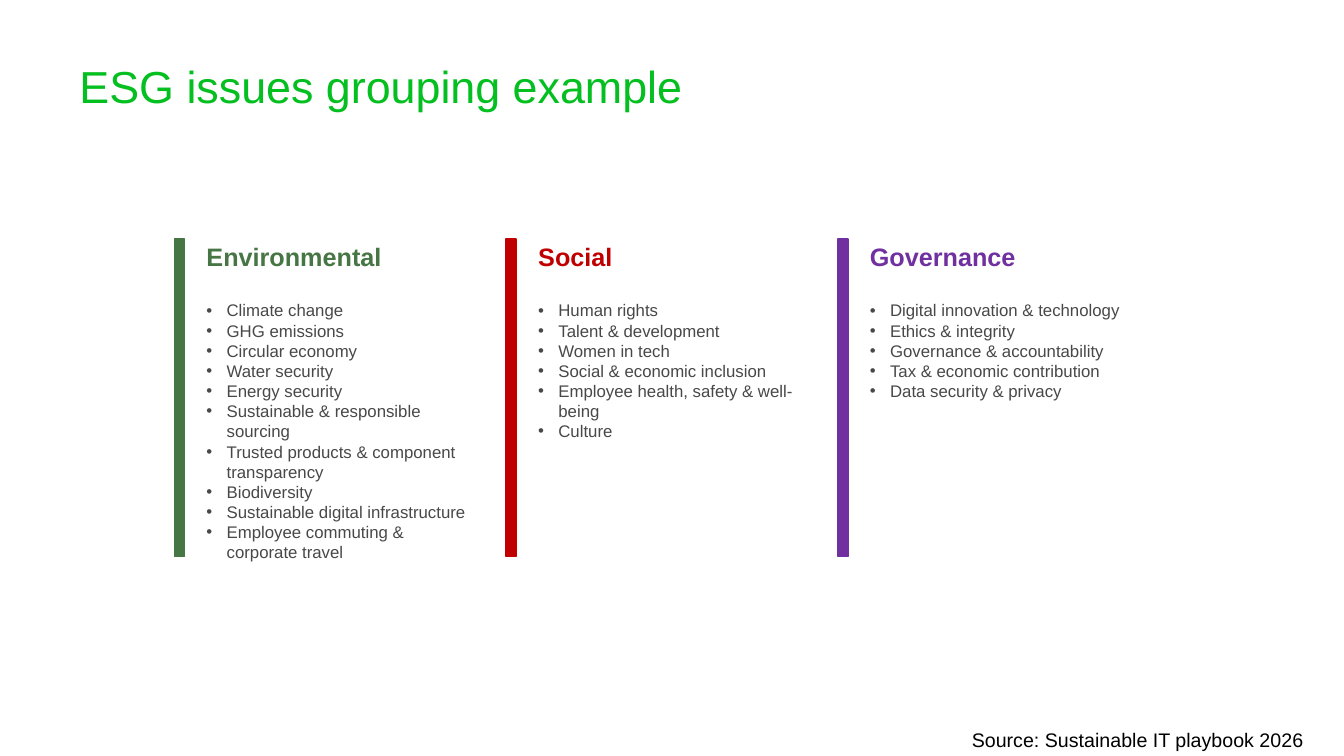
import pptx
import pptx.dml.color
import pptx.enum.shapes
import pptx.enum.text
import pptx.util
from lxml import etree

TITLE = "ESG issues grouping example"
SOURCE = "Source: Sustainable IT playbook 2026"
GROUPS = [
    ("Environmental", "467643", [
        "Climate change",
        "GHG emissions",
        "Circular economy",
        "Water security",
        "Energy security",
        "Sustainable & responsible sourcing",
        "Trusted products & component transparency",
        "Biodiversity",
        "Sustainable digital infrastructure",
        "Employee commuting & corporate travel",
    ]),
    ("Social", "C00000", [
        "Human rights",
        "Talent & development",
        "Women in tech",
        "Social & economic inclusion",
        "Employee health, safety & well-being",
        "Culture",
    ]),
    ("Governance", "7030A0", [
        "Digital innovation & technology",
        "Ethics & integrity",
        "Governance & accountability",
        "Tax & economic contribution",
        "Data security & privacy",
    ]),
]
FONT = "Arial"
TITLE_COLOR, ISSUE_COLOR, SOURCE_COLOR = "04BF20", "484848", "000000"
GRID_LEFT, GRID_TOP, COLUMN_PITCH = 1.73, 2.37, 3.29
BAR_WIDTH, ROW_HEIGHT = 0.1, 3.15
TEXT_OFFSET, TEXT_WIDTH = 0.22, 2.83
INDENT = 0.2

inches = pptx.util.Inches


def color(value):
    return pptx.dml.color.RGBColor.from_string(value)


def format_runs(paragraph, size, value, bold=False):
    for run in paragraph.runs:
        run.font.name = FONT
        run.font.size = pptx.util.Pt(size)
        run.font.bold = bold
        run.font.color.rgb = color(value)


def add_text(slide, left, top, width, height, text, size, value, bold=False):
    shape = slide.shapes.add_textbox(*map(inches, (left, top, width, height)))
    shape.text_frame.word_wrap = True
    shape.text_frame.text = text
    format_runs(shape.text_frame.paragraphs[0], size, value, bold)
    return shape.text_frame


def add_bullet(paragraph, value):
    properties = paragraph._p.get_or_add_pPr()
    properties.set("marL", str(inches(INDENT)))
    properties.set("indent", str(-inches(INDENT)))
    namespace = pptx.oxml.ns.qn
    bullet_color = etree.SubElement(properties, namespace("a:buClr"))
    etree.SubElement(bullet_color, namespace("a:srgbClr"), val=value)
    etree.SubElement(properties, namespace("a:buFont"), typeface=FONT)
    etree.SubElement(properties, namespace("a:buChar"), char="•")


def add_group(slide, column, heading, value, issues):
    left = GRID_LEFT + column * COLUMN_PITCH
    bar = slide.shapes.add_shape(
        pptx.enum.shapes.MSO_SHAPE.RECTANGLE,
        *map(inches, (left, GRID_TOP, BAR_WIDTH, ROW_HEIGHT)))
    bar.shadow.inherit = False
    bar.fill.solid()
    bar.fill.fore_color.rgb = color(value)
    bar.line.color.rgb = color(value)
    bar.line.width = pptx.util.Pt(1)

    frame = add_text(slide, left + TEXT_OFFSET, GRID_TOP, TEXT_WIDTH, ROW_HEIGHT,
                     heading, 18, value, True)
    frame.margin_left, frame.margin_right = inches(0.1), inches(0.05)
    frame.margin_top = frame.margin_bottom = inches(0.02)
    frame.paragraphs[0].space_after = pptx.util.Pt(20.7)
    for issue in issues:
        paragraph = frame.add_paragraph()
        paragraph.text = issue
        format_runs(paragraph, 12, ISSUE_COLOR)
        add_bullet(paragraph, ISSUE_COLOR)


def main():
    presentation = pptx.Presentation()
    presentation.slide_width = inches(13.33)
    presentation.slide_height = inches(7.5)
    slide = presentation.slides.add_slide(presentation.slide_layouts[6])

    for column, group in enumerate(GROUPS):
        add_group(slide, column, *group)

    fit = pptx.enum.text.MSO_AUTO_SIZE.SHAPE_TO_FIT_TEXT
    source = add_text(slide, 9.54, 7.17, 3.64, 0.34, SOURCE, 14, SOURCE_COLOR)
    source.word_wrap = False
    source.auto_size = fit
    title = add_text(slide, 0.69, 0.45, 8.97, 0.67, TITLE, 32, TITLE_COLOR)
    title.auto_size = fit
    title.paragraphs[0].line_spacing = 1.15
    title.paragraphs[0].space_after = pptx.util.Pt(4)

    presentation.save("out.pptx")


if __name__ == "__main__":
    main()
